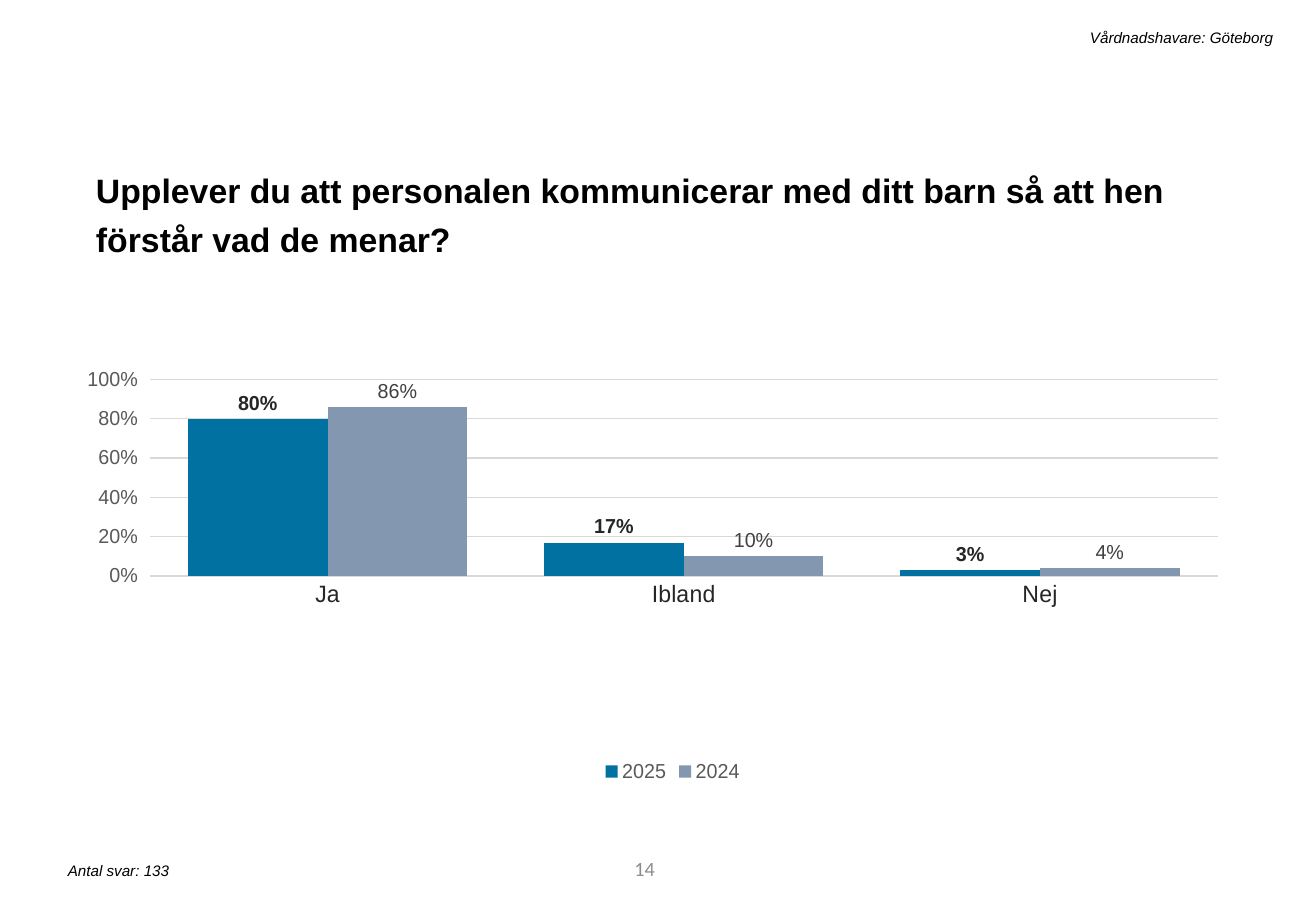
from lxml import etree
from pptx import Presentation, util as u
from pptx.chart.data import CategoryChartData
from pptx.dml.color import RGBColor
from pptx.enum import chart as ch, text
from pptx.oxml.ns import qn


def rgb(value):
    """Turn a hex string into a colour."""
    return RGBColor.from_string(value)


class SurveySlide:
    """Hold the survey style and the current slide."""

    font = "Arial"
    grid = "D9D9D9"
    grey = "595959"
    dark = "262626"

    def __init__(self, prs):
        """Add a slide with only a title."""
        self.s = prs.slides.add_slide(prs.slide_layouts[5])

    def style(self, f, size, color, bold=False, italic=False, name=None):
        """Format a font."""
        f.name = name or self.font
        f.size = u.Pt(size)
        f.bold = bold
        f.italic = italic
        f.color.rgb = rgb(color)

    def line(self, fmt):
        """Draw a thin grid line."""
        fmt.line.color.rgb = rgb(self.grid)
        fmt.line.width = u.Pt(0.75)

    def fill_text(self, sp, box, words, align, anchor, **font):
        """Place a shape and fill it with one paragraph."""
        sp.left, sp.top, sp.width, sp.height = map(u.Pt, box)
        tf = sp.text_frame
        tf.text = words
        tf.word_wrap = True
        tf.auto_size = text.MSO_AUTO_SIZE.NONE
        tf.vertical_anchor = anchor
        p = tf.paragraphs[0]
        p.alignment = align
        self.style(p.runs[0].font, **font)
        return p

    def title(self, box, words):
        """Fill the title placeholder."""
        p = self.fill_text(self.s.shapes.title, box, words, text.PP_ALIGN.LEFT,
                           text.MSO_ANCHOR.TOP, size=20, color="000000", bold=True)
        p.line_spacing = 1.2
        p.space_before = u.Pt(10)

    def label(self, box, words, align=text.PP_ALIGN.LEFT,
              anchor=text.MSO_ANCHOR.TOP, **font):
        """Add a small text box."""
        font = font or dict(size=9, color="000000", italic=True)
        sp = self.s.shapes.add_textbox(*map(u.Pt, box))
        self.fill_text(sp, box, words, align, anchor, **font)

    def columns(self, box, cats, series, plot_box):
        """Add a clustered column chart in percent."""
        data = CategoryChartData(number_format="0%")
        data.categories = cats
        for name, values, *_ in series:
            data.add_series(name, values)
        chart = self.s.shapes.add_chart(
            ch.XL_CHART_TYPE.COLUMN_CLUSTERED, *map(u.Pt, box), data).chart
        chart.has_title = False
        self.style(chart.font, 10, "000000")
        chart.has_legend = True
        chart.legend.position = ch.XL_LEGEND_POSITION.BOTTOM
        chart.legend.include_in_layout = False
        self.style(chart.legend.font, 12, self.grey)
        self.axes(chart)
        plot = chart.plots[0]
        plot.gap_width = 55
        plot.overlap = 0
        plot.vary_by_categories = False
        for ser, (_, _, fill, color, bold) in zip(plot.series, series):
            ser.format.fill.solid()
            ser.format.fill.fore_color.rgb = rgb(fill)
            labels = ser.data_labels
            labels.show_value = True
            labels.position = ch.XL_LABEL_POSITION.OUTSIDE_END
            labels.number_format = "0%"
            labels.number_format_is_linked = False
            self.style(labels.font, 12, color, bold)
        self.place_plot(chart, plot_box)

    def axes(self, chart):
        """Format both axes."""
        cat, val = chart.category_axis, chart.value_axis
        cat.major_tick_mark = ch.XL_TICK_MARK.NONE
        self.style(cat.tick_labels.font, 14, self.dark)
        self.line(cat.format)
        val.minimum_scale, val.maximum_scale, val.major_unit = 0, 1, 0.2
        val.major_tick_mark = ch.XL_TICK_MARK.OUTSIDE
        val.tick_labels.number_format = "0%"
        val.tick_labels.number_format_is_linked = False
        self.style(val.tick_labels.font, 12, self.grey)
        val.format.line.fill.background()
        self.line(val.major_gridlines.format)

    def place_plot(self, chart, plot_box):
        """Set the inner plot area as fractions of the chart."""
        area = chart.plots[0]._element.getparent()
        for old in area.findall(qn("c:layout")):
            area.remove(old)
        layout = etree.Element(qn("c:layout"))
        manual = etree.SubElement(layout, qn("c:manualLayout"))
        settings = [("layoutTarget", "inner"), ("xMode", "edge"), ("yMode", "edge")]
        for tag, value in settings + list(zip("xywh", plot_box)):
            etree.SubElement(manual, qn("c:" + tag)).set("val", str(value))
        area.insert(0, layout)


def main():
    """Build the survey slide."""
    prs = Presentation()
    prs.slide_width, prs.slide_height = u.Pt(780), u.Pt(540)
    page = SurveySlide(prs)
    page.title((49.7, 92.2, 676.8, 62.6),
               "Upplever du att personalen kommunicerar med ditt barn "
               "så att hen förstår vad de menar?")
    page.label((219.6, 500.4, 175.7, 28.8), "14", text.PP_ALIGN.RIGHT,
               text.MSO_ANCHOR.MIDDLE, size=12, color="8C8C8C", name="Calibri")
    page.label((33.1, 506.9, 317.5, 18), "Antal svar: 133")
    page.columns((51.8, 182.2, 676.8, 284.4), ["Ja", "Ibland", "Nej"],
                 [("2025", (0.8, 0.17, 0.03), "0071A1", page.dark, True),
                  ("2024", (0.86, 0.1, 0.04), "8497B0", "404040", False)],
                 (0.03, 0.15, 0.96, 0.41))
    page.label((123.8, 13, 637.9, 18), "Vårdnadshavare: Göteborg",
               text.PP_ALIGN.RIGHT)
    prs.save("out.pptx")


if __name__ == "__main__":
    main()
